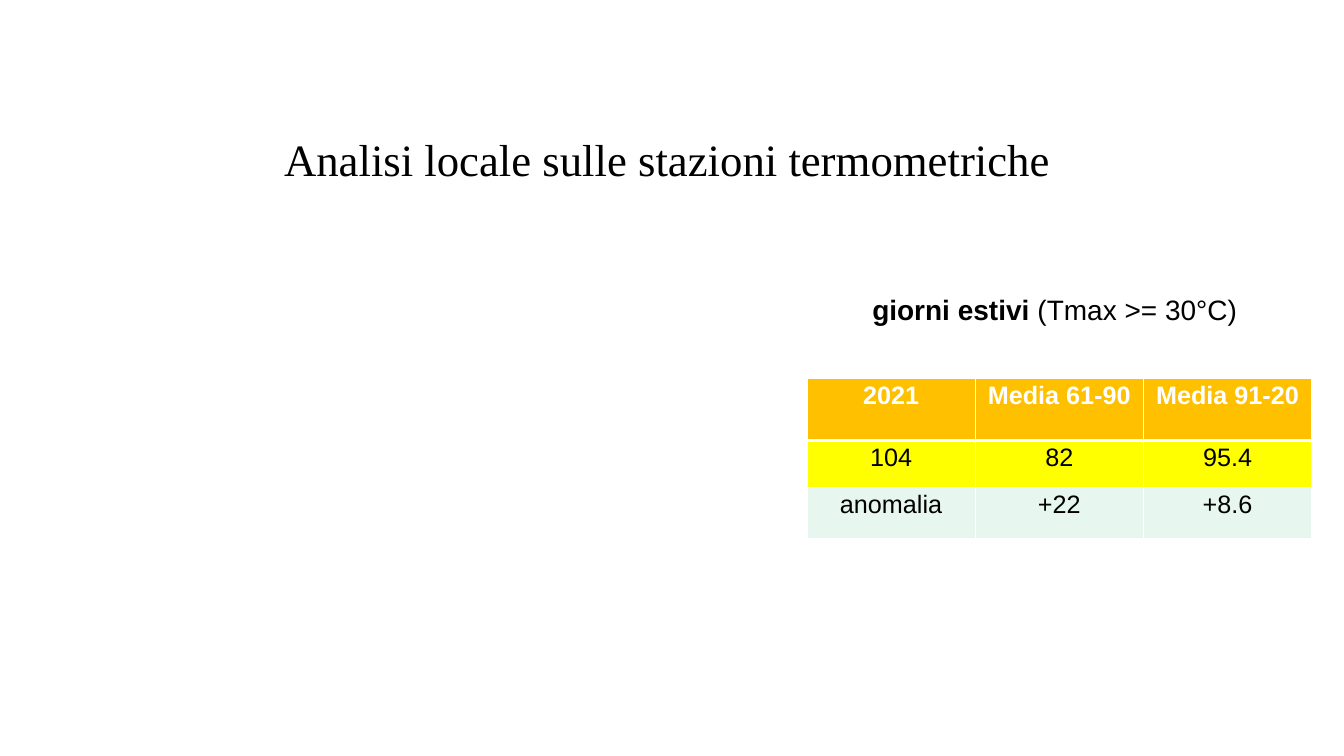
from lxml.etree import SubElement
from pptx import Presentation
from pptx.dml.color import RGBColor
from pptx.enum.text import MSO_ANCHOR, PP_ALIGN
from pptx.oxml.ns import qn
from pptx.util import Pt

TITLE = "Analisi locale sulle stazioni termometriche"
CAPTION = [("giorni estivi ", True), ("(Tmax >= 30°C)", False)]
ROWS = [
    ("2021", "Media 61-90", "Media 91-20"),
    ("104", "82", "95.4"),
    ("anomalia", "+22", "+8.6"),
]
COLORS = {"text": "000000", "white": "FFFFFF", "header": "FFC000",
          "values": "FFFF00", "anomaly": "E7F6EF"}
ROW_FILLS = ("header", "values", "anomaly")

# Lengths in px, 100 px to the inch
PX = 9144
SLIDE = (1334, 750)
TITLE_BOX = (29, 123, 1267, 63)
TITLE_INSETS = {"margin_left": 0, "margin_top": 8, "margin_right": 0, "margin_bottom": 0}
CAPTION_BOX = (856, 288, 386, 41)
TABLE_BOX = (801, 375, 501, 159)
ROW_HEIGHTS = (62, 47, 50)
LINE_SPACING = 0.93


def px(*lengths):
    return [n * PX for n in lengths]


def rgb(name):
    return RGBColor.from_string(COLORS[name])


def add_run(p, text, color="text", **font):
    r = p.add_run()
    r.text = text
    for key, value in font.items():
        setattr(r.font, key, value)
    r.font.color.rgb = rgb(color)


def add_text_box(slide, box):
    tf = slide.shapes.add_textbox(*px(*box)).text_frame
    tf.word_wrap = True
    return tf


def set_borders(cell, widths):
    """Draw white borders, given as side -> points; call before filling the cell."""
    tc_pr = cell._tc.get_or_add_tcPr()
    for side, width in widths.items():
        ln = SubElement(tc_pr, qn(f"a:ln{side}"), w=str(Pt(width)))
        fill = SubElement(ln, qn("a:solidFill"))
        SubElement(fill, qn("a:srgbClr"), val=COLORS["white"])


def add_title(slide):
    tf = add_text_box(slide, TITLE_BOX)
    for key, value in TITLE_INSETS.items():
        setattr(tf, key, value * PX)
    p = tf.paragraphs[0]
    p.alignment = PP_ALIGN.CENTER
    add_run(p, TITLE, name="Times New Roman", size=Pt(32))


def add_caption(slide):
    tf = add_text_box(slide, CAPTION_BOX)
    tf.vertical_anchor = MSO_ANCHOR.MIDDLE
    p = tf.paragraphs[0]
    p.line_spacing = LINE_SPACING
    for text, bold in CAPTION:
        add_run(p, text, name="Arial", size=Pt(20), bold=bold)


def add_days_table(slide):
    table = slide.shapes.add_table(len(ROWS), len(ROWS[0]), *px(*TABLE_BOX)).table
    for row, height in zip(table.rows, ROW_HEIGHTS):
        row.height = height * PX
    for i, (texts, fill) in enumerate(zip(ROWS, ROW_FILLS)):
        header = i == 0
        widths = {"L": 1, "R": 1, "T": 3 if i == 1 else 1, "B": 3 if header else 1}
        for j, text in enumerate(texts):
            cell = table.cell(i, j)
            set_borders(cell, widths)
            cell.fill.solid()
            cell.fill.fore_color.rgb = rgb(fill)
            p = cell.text_frame.paragraphs[0]
            p.alignment = PP_ALIGN.CENTER
            p.line_spacing = LINE_SPACING
            add_run(p, text, "white" if header else "text",
                    name="Arial", size=Pt(18), bold=header)


def main():
    prs = Presentation()
    prs.slide_width, prs.slide_height = px(*SLIDE)
    slide = prs.slides.add_slide(prs.slide_layouts[6])
    add_title(slide)
    add_caption(slide)
    add_days_table(slide)
    prs.save("out.pptx")


if __name__ == "__main__":
    main()
